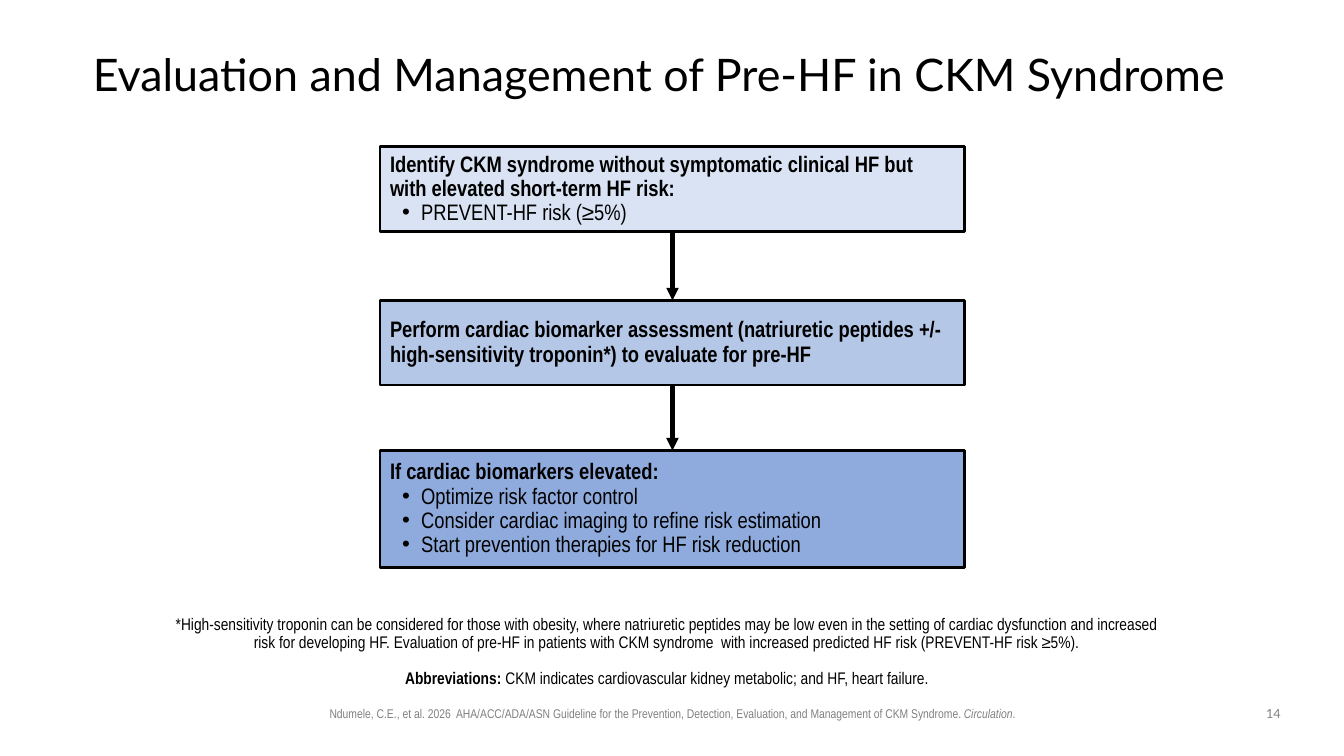
from dataclasses import dataclass
from itertools import pairwise

from pptx import Presentation
from pptx.dml.color import RGBColor
from pptx.enum.shapes import MSO_CONNECTOR, MSO_SHAPE
from pptx.enum.text import MSO_ANCHOR, PP_ALIGN
from pptx.oxml.ns import qn
from pptx.util import Inches, Pt
from lxml.etree import SubElement

# Content: each run is (text, style), with style "", "b" or "i"
TITLE = "Evaluation and Management of Pre-HF in CKM Syndrome"
STEPS = [  # top, height, fill, heading, bullets
    (1.45, 0.85, "DAE3F3",
     "Identify CKM syndrome without symptomatic clinical HF but with elevated short-term HF risk:",
     ["PREVENT-HF risk (≥5%)"]),
    (2.98, 0.84, "B4C7E7",
     "Perform cardiac biomarker assessment (natriuretic peptides +/- "
     "high-sensitivity troponin*) to evaluate for pre-HF",
     []),
    (4.47, 1.16, "8FAADC",
     "If cardiac biomarkers elevated:",
     ["Optimize risk factor control",
      "Consider cardiac imaging to refine risk estimation",
      "Start prevention therapies for HF risk reduction"]),
]
NOTES = [
    [("*High-sensitivity troponin can be considered for those with obesity, where natriuretic "
      "peptides may be low even in the setting of cardiac dysfunction and increased risk for "
      "developing HF. Evaluation of pre-HF in patients with CKM syndrome  with increased "
      "predicted HF risk (PREVENT-HF risk ≥5%).", "")],
    [("Abbreviations: ", "b"),
     ("CKM indicates cardiovascular kidney metabolic; and HF, heart failure.", "")],
]
CITATION = [
    ("Ndumele, C.E., et al. 2026  AHA/ACC/ADA/ASN Guideline for the Prevention, Detection, "
     "Evaluation, and Management of CKM Syndrome. ", ""),
    ("Circulation", "i"),
    (".", ""),
]
PAGE = "14"
STEP_LEFT, STEP_WIDTH = 3.77, 5.8


@dataclass(frozen=True)
class Theme:
    heading: str = "Lato"
    body: str = "Arial Narrow"
    ink: str = "000000"
    muted: str = "808080"
    title_size: int = 32
    step_size: int = 16
    note_size: int = 12
    footer_size: int = 9
    spacing: float = 0.9


theme = Theme()


def rgb(value):
    return RGBColor.from_string(value)


def set_frame(tf, anchor, insets):
    tf.word_wrap = True
    tf.vertical_anchor = anchor
    (tf.margin_left, tf.margin_top,
     tf.margin_right, tf.margin_bottom) = [Inches(v) for v in insets]


def add_runs(p, runs, size, font=theme.body, color=theme.ink, align=PP_ALIGN.LEFT):
    p.alignment = align
    for text, style in runs:
        r = p.add_run()
        r.text = text
        r.font.name, r.font.size = font, Pt(size)
        r.font.color.rgb = rgb(color)
        r.font.bold = style == "b"
        r.font.italic = style == "i"


def add_bullet(p):
    pPr = p._p.get_or_add_pPr()
    pPr.set("marL", str(Inches(0.31)))
    pPr.set("indent", str(Inches(-0.19)))
    SubElement(pPr, qn("a:buFont"), typeface="Arial")
    SubElement(pPr, qn("a:buChar"), char="•")


def next_paragraph(tf, i):
    p = tf.add_paragraph() if i else tf.paragraphs[0]
    p.line_spacing = theme.spacing
    return p


def add_text_box(s, box, anchor, insets):
    tf = s.shapes.add_textbox(*[Inches(v) for v in box]).text_frame
    set_frame(tf, anchor, insets)
    return tf


def add_step(s, top, height, fill, heading, bullets):
    sp = s.shapes.add_shape(MSO_SHAPE.RECTANGLE, Inches(STEP_LEFT), Inches(top),
                            Inches(STEP_WIDTH), Inches(height))
    sp.shadow.inherit = False
    sp.fill.solid()
    sp.fill.fore_color.rgb = rgb(fill)
    sp.line.color.rgb = rgb(theme.ink)
    sp.line.width = Pt(2)
    tf = sp.text_frame
    set_frame(tf, MSO_ANCHOR.MIDDLE, [0.1] * 4)
    for i, text in enumerate([heading, *bullets]):
        p = next_paragraph(tf, i)
        if i:
            add_bullet(p)
        add_runs(p, [(text, "" if i else "b")], theme.step_size)
    return sp


def add_arrow(s, upper, lower):
    arrow = s.shapes.add_connector(MSO_CONNECTOR.STRAIGHT, 0, 0, 0, 0)
    arrow.begin_connect(upper, 2)
    arrow.end_connect(lower, 0)
    arrow.line.color.rgb = rgb(theme.ink)
    arrow.line.width = Pt(3)
    SubElement(arrow.line._get_or_add_ln(), qn("a:tailEnd"), type="triangle")
    SubElement(arrow._element.spPr, qn("a:effectLst"))


def main():
    prs = Presentation()
    prs.slide_width, prs.slide_height = Inches(13.33), Inches(7.5)
    s = prs.slides.add_slide(prs.slide_layouts[5])

    # Title
    title = s.shapes.title
    title.left, title.top, title.width, title.height = [
        Inches(v) for v in (0.92, 0.4, 11.5, 0.72)]
    set_frame(title.text_frame, MSO_ANCHOR.MIDDLE, [0] * 4)
    add_runs(next_paragraph(title.text_frame, 0), [(TITLE, "")],
             theme.title_size, theme.heading)

    # Flow of steps, joined by arrows
    steps = [add_step(s, *step) for step in STEPS]
    for upper, lower in pairwise(steps):
        add_arrow(s, upper, lower)

    # Footnote and abbreviations
    tf = add_text_box(s, (1.71, 6.03, 9.91, 0.85), MSO_ANCHOR.BOTTOM, (0, 0.05, 0.1, 0.05))
    for i, runs in enumerate(NOTES):
        p = next_paragraph(tf, i)
        if i:
            p.space_before = Pt(13)
        add_runs(p, runs, theme.note_size, align=PP_ALIGN.CENTER)

    # Citation and page number
    footers = [((2.36, 6.95, 8.62, 0.25), CITATION, theme.body),
               ((12.42, 6.95, 0.42, 0.26), [(PAGE, "")], theme.heading)]
    for box, runs, font in footers:
        tf = add_text_box(s, box, MSO_ANCHOR.TOP, (0.1, 0.05, 0.1, 0.05))
        add_runs(tf.paragraphs[0], runs, theme.footer_size, font, theme.muted,
                 PP_ALIGN.CENTER)

    prs.save("out.pptx")


if __name__ == "__main__":
    main()
